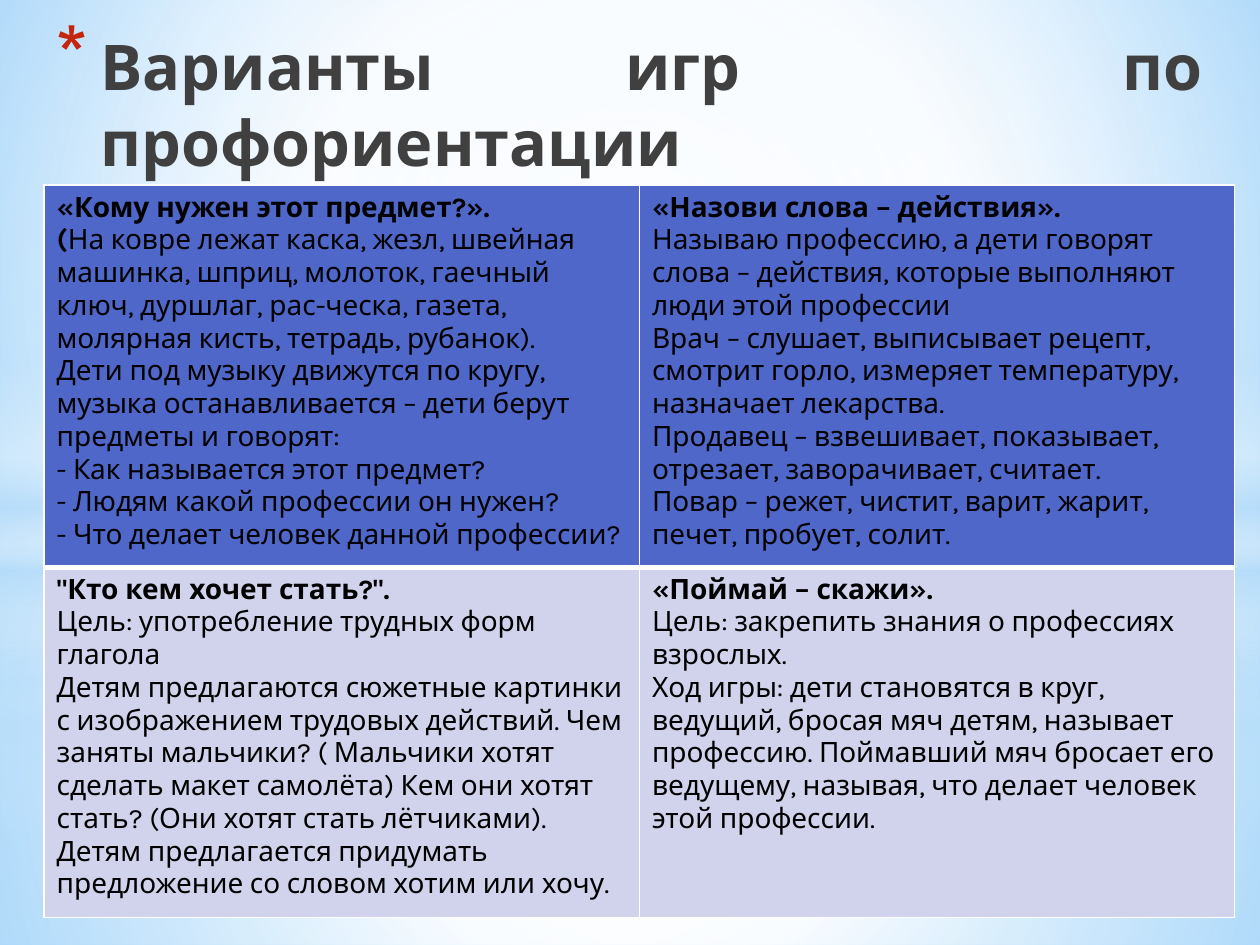
from lxml import etree
from pptx import Presentation, util as u
from pptx.dml.color import RGBColor
from pptx.enum import shapes, text
from pptx.oxml import parse_xml
from pptx.oxml.ns import nsdecls, qn

W, H = 10, 7.5
FONT = "Karla"
CENTER = (50, 50, 50, 50)
MARGIN = 0.035 * W
TABLE_TOP = 1.47

# Gradient stops: position, colour, opacity (percent)
LOWER = [(0, "FFFFFF", 91), (37, "FFFFFF", 76), (100, "B4DCFA", 79)]
UPPER = [(0, "FFFFFF", 89), (48, "FFFFFF", 62), (100, "B4DCFA", 79)]
BAND = [(0, "FFFFFF", 0), (29, "FFFFFF", 30), (45, "B4DCFA", 40),
        (55, "FFFFFF", 26), (65, "B4DCFA", 60), (100, "FFFFFF", 0)]
SKY = [(0, "9ED5FF", 100), (60, "FFFFFF", 100), (100, "5BB9FF", 100)]

# Each cell is a bold heading and its paragraphs
GAMES = [
    [("«Кому нужен этот предмет?».", [
        "(На ковре лежат каска, жезл, швейная машинка, шприц, молоток, гаечный "
        "ключ, дуршлаг, рас-ческа, газета, молярная кисть, тетрадь, рубанок).",
        "Дети под музыку движутся по кругу, музыка останавливается – дети берут "
        "предметы и говорят:",
        "- Как называется этот предмет?",
        "- Людям какой профессии он нужен?",
        "- Что делает человек данной профессии?"]),
     ("«Назови слова – действия».", [
         "Называю профессию, а дети говорят слова – действия, которые выполняют "
         "люди этой профессии",
         "Врач – слушает, выписывает рецепт, смотрит горло, измеряет температуру, "
         "назначает лекарства.",
         "Продавец – взвешивает, показывает, отрезает, заворачивает, считает.",
         "Повар – режет, чистит, варит, жарит, печет, пробует, солит."])],
    [('"Кто кем хочет стать?".', [
        "Цель: употребление трудных форм глагола",
        "Детям предлагаются сюжетные картинки с изображением трудовых действий. "
        "Чем заняты мальчики? ( Мальчики хотят сделать макет самолёта) Кем они "
        "хотят стать? (Они хотят стать лётчиками). Детям предлагается придумать "
        "предложение со словом хотим или хочу."]),
     ("«Поймай – скажи».", [
         "Цель: закрепить знания о профессиях взрослых.",
         "Ход игры: дети становятся в круг, ведущий, бросая мяч детям, называет "
         "профессию. Поймавший мяч бросает его ведущему, называя, что делает "
         "человек этой профессии."])],
]
ROWS = [("4E67C8", 2.77, 3), ("D0D3EB", 2.78, 1)]  # fill, height, bottom border


def color(value):
    return RGBColor.from_string(value)


def set_gradient(root, stops, focus=None):
    """Replace the solid fill under root: radial with a focus, else vertical."""
    gs = "".join(f'<a:gs pos="{pos * 1000}"><a:srgbClr val="{c}">'
                 f'<a:alpha val="{alpha * 1000}"/></a:srgbClr></a:gs>'
                 for pos, c, alpha in stops)
    if focus:
        sides = " ".join(f'{k}="{v * 1000}"' for k, v in zip("ltrb", focus))
        shade = f'<a:path path="circle"><a:fillToRect {sides}/></a:path>'
    else:
        shade = '<a:lin ang="5400000" scaled="0"/>'
    solid = root.find(".//" + qn("a:solidFill"))
    solid.getparent().replace(solid, parse_xml(
        f'<a:gradFill {nsdecls("a")} rotWithShape="1"><a:gsLst>{gs}</a:gsLst>'
        f'{shade}</a:gradFill>'))


def add_glow(s, top, height, stops, focus=None, kind=shapes.MSO_SHAPE.RECTANGLE):
    sp = s.shapes.add_shape(kind, 0, u.Inches(top), u.Inches(W), u.Inches(height))
    sp.shadow.inherit = False
    sp.line.fill.background()
    sp.fill.solid()
    set_gradient(sp._element.spPr, stops, focus)


def add_run(p, content, size=16, fill="000000", bold=False):
    r = p.add_run()
    r.text = content
    r.font.name, r.font.size, r.font.bold = FONT, u.Pt(size), bold
    r.font.color.rgb = color(fill)


def add_background(s):
    s.background.fill.solid()
    set_gradient(s._element.cSld, SKY, (20, 10, 20, 60))
    # Two sets of glows that differ in where the horizon lies
    for horizon, band_top, core in ((5.58, 4.12, 56), (4.23, 2.9, 54)):
        add_glow(s, horizon, H - horizon, LOWER, CENTER)
        add_glow(s, 0, horizon, UPPER, CENTER)
        add_glow(s, band_top, H / 3, BAND)
        add_glow(s, 1.75, 5.58, [(0, "FFFFFF", 100), (core, "FFFFFF", 0)],
                 CENTER, shapes.MSO_SHAPE.OVAL)


def add_title(s, content):
    sp = s.shapes.add_textbox(u.Inches(MARGIN), u.Inches(0.29),
                              u.Inches(W - 2 * MARGIN), u.Inches(1.18))
    tf = sp.text_frame
    tf.word_wrap = True
    tf.vertical_anchor = text.MSO_ANCHOR.BOTTOM
    p = tf.paragraphs[0]
    p.alignment = text.PP_ALIGN.JUSTIFY
    add_run(p, content, size=36, fill="404040", bold=True)
    # Hanging asterisk bullet
    pPr = p._p.get_or_add_pPr()
    pPr.set("marL", str(u.Inches(0.35)))
    pPr.set("indent", str(-u.Inches(0.35)))
    bullet = etree.SubElement(pPr, qn("a:buClr"))
    etree.SubElement(bullet, qn("a:srgbClr"), val="C3260C")
    etree.SubElement(pPr, qn("a:buSzPct"), val="128000")
    etree.SubElement(pPr, qn("a:buChar"), char="*")


def set_borders(cell, bottom):
    tcPr = cell._tc.get_or_add_tcPr()
    for i, (side, width) in enumerate(zip("LRTB", (1, 1, 1, bottom))):
        tcPr.insert(i, parse_xml(
            f'<a:ln{side} {nsdecls("a")} w="{u.Pt(width)}"><a:solidFill>'
            f'<a:srgbClr val="FFFFFF"/></a:solidFill></a:ln{side}>'))


def fill_cell(cell, heading, lines, fill, bottom):
    cell.fill.solid()
    cell.fill.fore_color.rgb = color(fill)
    set_borders(cell, bottom)
    tf = cell.text_frame
    add_run(tf.paragraphs[0], heading, bold=True)
    for line in lines:
        p = tf.add_paragraph()
        if line.startswith("("):  # the opening bracket is bold
            add_run(p, "(", bold=True)
            line = line[1:]
        add_run(p, line)


def add_games(s):
    table = s.shapes.add_table(
        len(GAMES), len(GAMES[0]), u.Inches(MARGIN), u.Inches(TABLE_TOP),
        u.Inches(9.45), u.Inches(sum(h for _, h, _ in ROWS))).table
    table.first_row = table.horz_banding = False
    for i, (fill, height, bottom) in enumerate(ROWS):
        table.rows[i].height = u.Inches(height)
        for j, (heading, lines) in enumerate(GAMES[i]):
            fill_cell(table.cell(i, j), heading, lines, fill, bottom)


def main():
    prs = Presentation()
    prs.slide_width, prs.slide_height = u.Inches(W), u.Inches(H)
    s = prs.slides.add_slide(prs.slide_layouts[6])
    add_background(s)
    add_title(s, "Варианты игр  по профориентации")
    add_games(s)
    prs.save("out.pptx")


if __name__ == "__main__":
    main()
